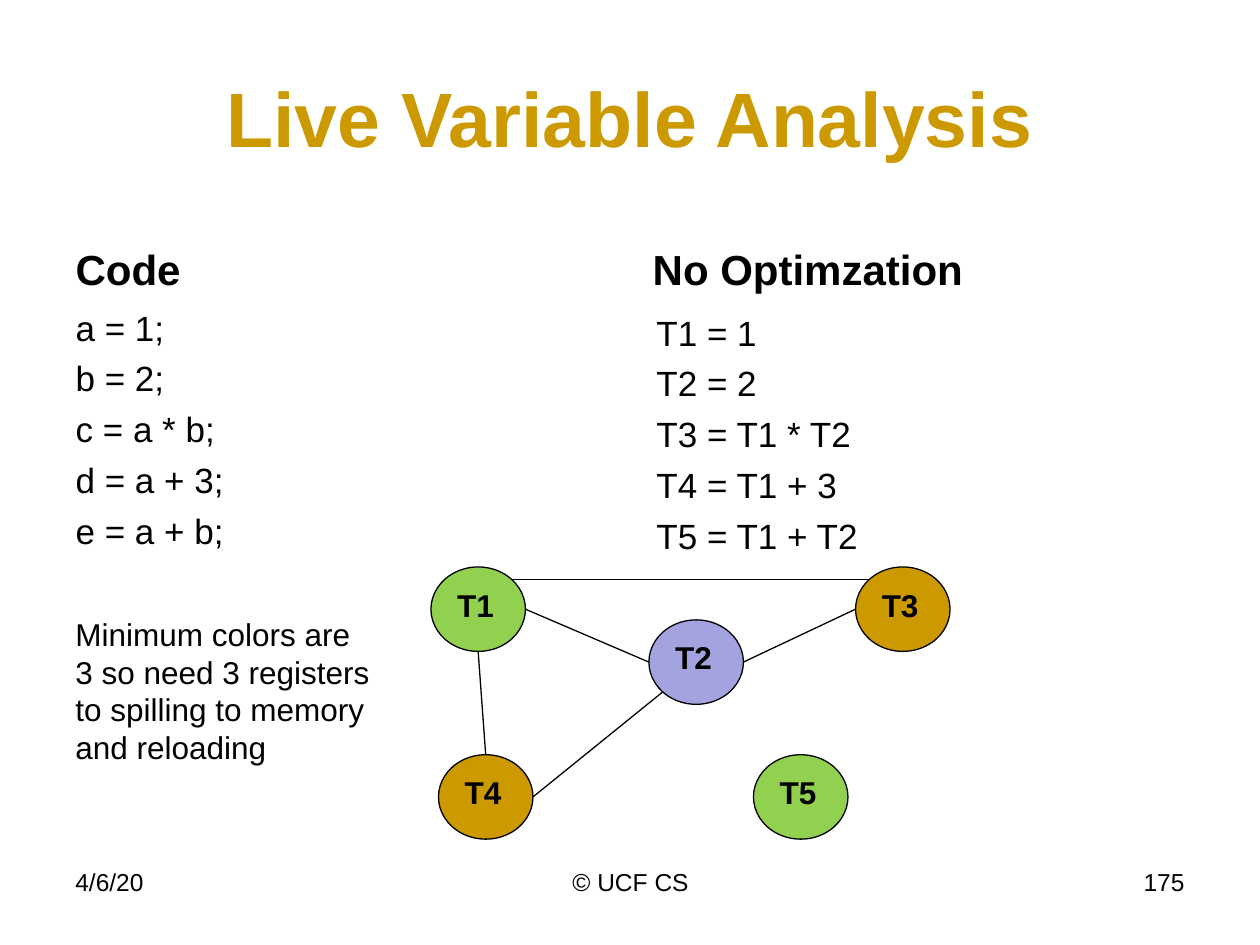
from dataclasses import dataclass
from math import cos, radians, sin

from lxml import etree
from pptx import Presentation, util as u
from pptx.dml.color import RGBColor
from pptx.enum import shapes, text
from pptx.oxml.ns import qn

COLUMNS, ROWS = 100, 75
COLORS = {"black": "000000", "gold": "CC9900", "green": "92D050", "violet": "A3A3E0"}
FORMATS = {
    "title": {"size": u.Pt(44), "bold": True},
    "heading": {"size": u.Pt(24), "bold": True},
    "list": {"size": u.Pt(20), "bold": False},
    "node": {"size": u.Pt(18), "bold": True},
    "note": {"size": u.Pt(18), "bold": False},
    "footer": {"size": u.Pt(14), "bold": False},
}
ALIGN = text.PP_ALIGN
ANCHOR = text.MSO_ANCHOR
NODE_WIDTH, NODE_HEIGHT = 7.5, 6.7
RIGHT, BOTTOM, LOWER_LEFT, LEFT, UPPER_LEFT, TOP, UPPER_RIGHT = 0, 90, 135, 180, 225, 270, 315


@dataclass
class Box:
    column: float
    row: float
    columns: float
    rows: float


@dataclass
class Block:
    box: Box
    lines: list[str]
    style: str
    align: ALIGN = ALIGN.LEFT
    anchor: ANCHOR = ANCHOR.TOP
    color: str = "black"


@dataclass
class Node:
    column: float
    row: float
    color: str


@dataclass
class Edge:
    start: str
    start_angle: int
    end: str
    end_angle: int


PLACEHOLDERS = [
    Block(Box(5, 3, 90, 12.5), ["Live Variable Analysis"], "title",
          ALIGN.CENTER, ANCHOR.MIDDLE, "gold"),
    Block(Box(5, 16.8, 44.2, 7), ["Code"], "heading", anchor=ANCHOR.BOTTOM),
    Block(Box(5, 23.8, 44.2, 43.2),
          ["a = 1;", "b = 2;", "c = a * b;", "d = a + 3;", "e = a + b;"], "list"),
    Block(Box(50.8, 16.8, 44.2, 7), ["No Optimzation"], "heading", anchor=ANCHOR.BOTTOM),
    Block(Box(51.1, 24.2, 44.2, 43.2),
          ["T1 = 1", "T2 = 2", "T3 = T1 * T2", "T4 = T1 + 3", "T5 = T1 + T2"], "list"),
]
TEXT_BOXES = [
    Block(Box(5, 68.3, 23.3, 5.2), ["4/6/20"], "footer"),
    Block(Box(34.2, 68.3, 31.7, 5.2), ["© UCF CS"], "footer", ALIGN.CENTER),
    Block(Box(71.7, 68.3, 23.3, 5.2), ["175"], "footer", ALIGN.RIGHT),
    Block(Box(5, 48.3, 25.8, 13.1),
          ["Minimum colors are 3 so need 3 registers to spilling to memory and reloading"],
          "note"),
]
NODES = {
    "T1": Node(34.2, 45, "green"),
    "T4": Node(34.8, 59.9, "gold"),
    "T5": Node(59.8, 59.9, "green"),
    "T3": Node(67.9, 45, "gold"),
    "T2": Node(51.5, 49.2, "violet"),
}
EDGES = [
    Edge("T1", RIGHT, "T2", LEFT),
    Edge("T2", RIGHT, "T3", LEFT),
    Edge("T1", BOTTOM, "T4", TOP),
    Edge("T2", LOWER_LEFT, "T4", RIGHT),
    Edge("T1", UPPER_RIGHT, "T3", UPPER_LEFT),
]


def rgb(name: str) -> RGBColor:
    return RGBColor.from_string(COLORS[name])


def place(presentation, box: Box) -> dict[str, int]:
    column = presentation.slide_width / COLUMNS
    row = presentation.slide_height / ROWS
    return {
        "left": round(box.column * column),
        "top": round(box.row * row),
        "width": round(box.columns * column),
        "height": round(box.rows * row),
    }


def write(shape, block: Block) -> None:
    frame = shape.text_frame
    frame.text = "\n".join(block.lines)
    settings = {"word_wrap": True, "auto_size": text.MSO_AUTO_SIZE.NONE,
                "vertical_anchor": block.anchor}
    for name, value in settings.items():
        setattr(frame, name, value)
    for index, paragraph in enumerate(frame.paragraphs):
        paragraph.alignment = block.align
        paragraph.space_before = u.Pt(5 if index else 0)
        if block.style == "list":
            properties = paragraph._p.get_or_add_pPr()
            properties.set("marL", "0")
            properties.set("indent", "0")
            etree.SubElement(properties, qn("a:buNone"))
        font = paragraph.runs[0].font
        for name, value in {"name": "Arial", **FORMATS[block.style]}.items():
            setattr(font, name, value)
        font.color.rgb = rgb(block.color)


def fill_placeholder(presentation, shape, block: Block) -> None:
    for name, value in place(presentation, block.box).items():
        setattr(shape, name, value)
    write(shape, block)


def outline(shape) -> None:
    shape.line.color.rgb = rgb("black")
    shape.line.width = u.Pt(0.75)


def add_node(presentation, slide, label: str, node: Node) -> None:
    box = Box(node.column, node.row, NODE_WIDTH, NODE_HEIGHT)
    shape = slide.shapes.add_shape(shapes.MSO_SHAPE.OVAL, **place(presentation, box))
    shape.shadow.inherit = False
    shape.fill.solid()
    shape.fill.fore_color.rgb = rgb(node.color)
    outline(shape)
    write(shape, Block(box, [label], "node"))


def rim_point(presentation, node: Node, angle: int) -> tuple[int, int]:
    column = node.column + NODE_WIDTH / 2 * (1 + cos(radians(angle)))
    row = node.row + NODE_HEIGHT / 2 * (1 + sin(radians(angle)))
    point = place(presentation, Box(column, row, 0, 0))
    return point["left"], point["top"]


def add_edge(presentation, slide, edge: Edge) -> None:
    start = rim_point(presentation, NODES[edge.start], edge.start_angle)
    end = rim_point(presentation, NODES[edge.end], edge.end_angle)
    line = slide.shapes.add_connector(shapes.MSO_CONNECTOR.STRAIGHT, *start, *end)
    outline(line)
    etree.SubElement(line._element.spPr, qn("a:effectLst"))


def main() -> None:
    presentation = Presentation()
    presentation.slide_width, presentation.slide_height = u.Inches(10), u.Inches(7.5)
    slide = presentation.slides.add_slide(presentation.slide_layouts.get_by_name("Comparison"))
    for shape, block in zip(slide.placeholders, PLACEHOLDERS):
        fill_placeholder(presentation, shape, block)
    for label, node in NODES.items():
        add_node(presentation, slide, label, node)
    for edge in EDGES:
        add_edge(presentation, slide, edge)
    for block in TEXT_BOXES:
        write(slide.shapes.add_textbox(**place(presentation, block.box)), block)
    presentation.save("out.pptx")


if __name__ == "__main__":
    main()
